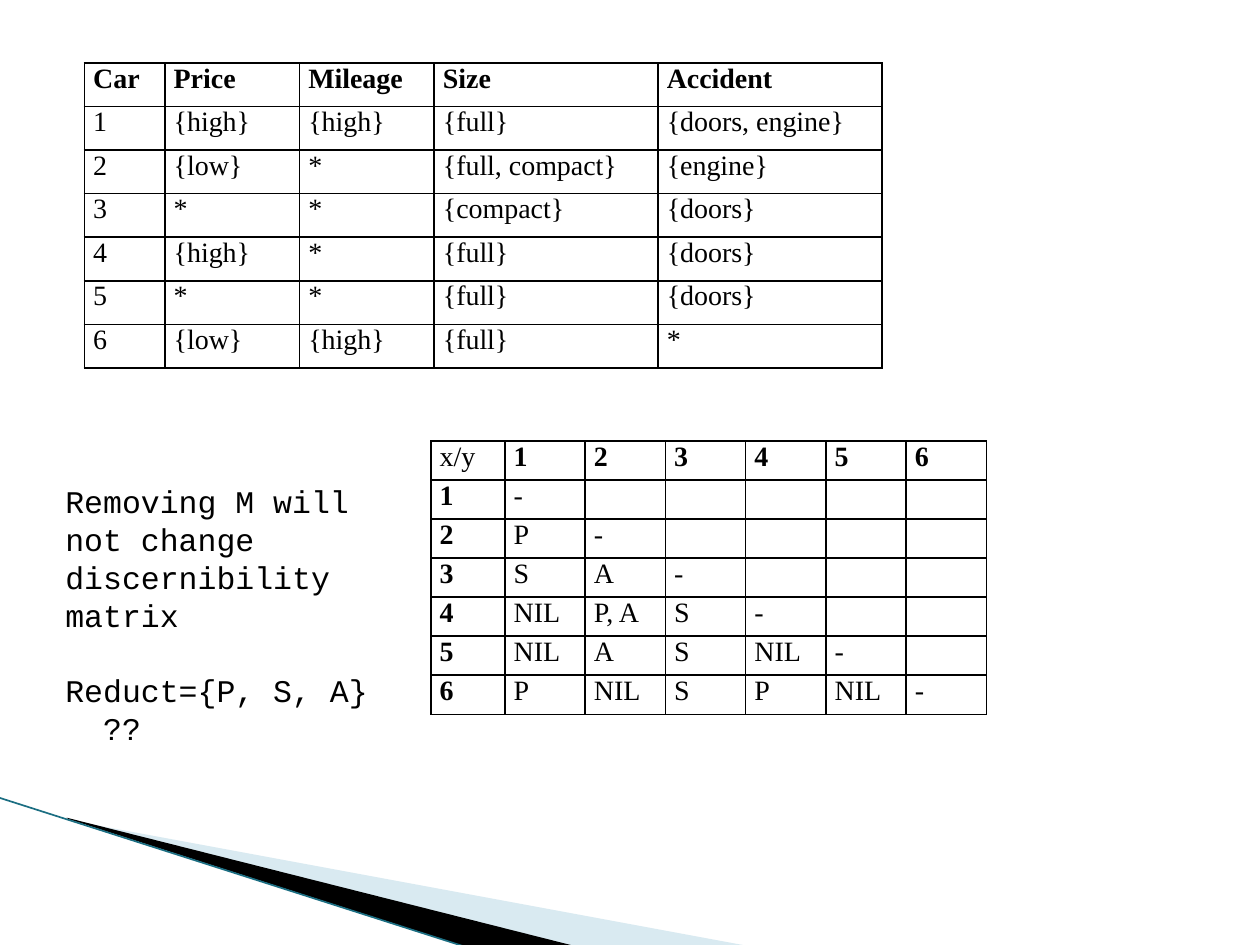
from pptx import Presentation
from pptx.util import Inches, Pt
from pptx.dml.color import RGBColor as RGB
from pptx.enum.shapes import MSO_CONNECTOR as Conn
from pptx.enum.text import MSO_AUTO_SIZE as Auto
from pptx.oxml.ns import qn
from lxml.etree import SubElement as Sub

# Content
CARS = [
    ["Car", "Price", "Mileage", "Size", "Accident"],
    ["1", "{high}", "{high}", "{full}", "{doors, engine}"],
    ["2", "{low}", "*", "{full, compact}", "{engine}"],
    ["3", "*", "*", "{compact}", "{doors}"],
    ["4", "{high}", "*", "{full}", "{doors}"],
    ["5", "*", "*", "{full}", "{doors}"],
    ["6", "{low}", "{high}", "{full}", "*"],
]
# Lower triangle of the discernibility matrix, one row per car
PAIRS = [
    ["-"],
    ["P", "-"],
    ["S", "A", "-"],
    ["NIL", "P, A", "S", "-"],
    ["NIL", "A", "S", "NIL", "-"],
    ["P", "NIL", "S", "P", "NIL", "-"],
]
NOTES = ["Removing M will", "not change", "discernibility matrix",
         "Reduct={P, S, A} ??"]
# Corner wedges: frame, points on the slide, colour, opacity in percent
WEDGES = [
    ((0.78, 5.47, 4.16, 1.58),
     [(0.55, 6.51), (5.95, 7.51), (4.56, 7.51), (0.55, 6.5)], "A0CBDC", 40),
    ((-0.06, 6.33, 4.16, 0.92),
     [(0.53, 6.49), (4.57, 7.51), (3.72, 7.52), (0.54, 6.5)], "000000", 100),
]
THEME = dict(ink="000000", edge="1B6E82", serif="Times New Roman",
             mono="Courier New", cell=16, note=18, rule=1)


def style(para, face, size, bold=False):
    font = para.font
    font.name, font.size, font.bold = face, Pt(size), bold
    font.color.rgb = RGB.from_string(THEME["ink"])


def border(cell):
    props = cell._tc.get_or_add_tcPr()
    for side in "LRTB":
        line = Sub(props, qn(f"a:ln{side}"), w=str(Pt(THEME["rule"])))
        Sub(Sub(line, qn("a:solidFill")), qn("a:srgbClr"), val=THEME["ink"])
    cell.fill.background()


def grid(slide, left, top, wide, high, parts, rows, is_bold):
    shape = slide.shapes.add_table(len(rows), len(parts), Inches(left),
                                   Inches(top), Inches(wide), Inches(high))
    table = shape.table
    table.horz_banding = False
    for col, part in zip(table.columns, parts):
        col.width = Inches(wide * part / sum(parts))
    for r, row in enumerate(rows):
        table.rows[r].height = Inches(high / len(rows))
        for c, text in enumerate(row):
            cell = table.cell(r, c)
            cell.margin_left = cell.margin_right = Inches(0.07)
            cell.margin_top = cell.margin_bottom = 0
            border(cell)
            cell.text = text
            style(cell.text_frame.paragraphs[0], THEME["serif"],
                  THEME["cell"], is_bold(r, c))


def wedge(slide, frame, points, color, alpha):
    dots = [(Inches(x), Inches(y)) for x, y in points]
    pen = slide.shapes.build_freeform(*dots[0])
    pen.add_line_segments(dots[1:], close=True)
    shape = pen.convert_to_shape()
    shape.shadow.inherit = False
    shape.line.fill.background()
    shape.fill.solid()
    shape.fill.fore_color.rgb = RGB.from_string(color)
    props = shape._element.spPr
    if alpha < 100:
        tint = props.find(".//" + qn("a:srgbClr"))
        Sub(tint, qn("a:alpha"), val=str(alpha * 1000))

    # The outline runs past its frame, so its points are set against the frame
    left, top, wide, high = map(Inches, frame)
    shape.left, shape.top, shape.width, shape.height = left, top, wide, high
    track = props.find(".//" + qn("a:path"))
    track.set("w", str(wide))
    track.set("h", str(high))
    for spot, (x, y) in zip(track.iter(qn("a:pt")), dots):
        spot.set("x", str(x - left))
        spot.set("y", str(y - top))


def main():
    deck = Presentation()
    deck.slide_width, deck.slide_height = Inches(10), Inches(7.5)
    slide = deck.slides.add_slide(deck.slide_layouts[6])

    # Corner decoration
    for item in WEDGES:
        wedge(slide, *item)
    edge = slide.shapes.add_connector(Conn.STRAIGHT, Inches(-0.01), Inches(6.33),
                                      Inches(3.71), Inches(7.52))
    edge.line.color.rgb = RGB.from_string(THEME["edge"])
    edge.line.width = Pt(0.95)
    Sub(edge._element.spPr, qn("a:effectLst"))

    # Car table and discernibility matrix
    grid(slide, 0.67, 0.5, 6.33, 2.42, [0.64, 1.07, 1.07, 1.78, 1.78], CARS,
         lambda r, c: r == 0)
    count = len(PAIRS)
    heads = [str(n + 1) for n in range(count)]
    rows = [["x/y"] + heads]
    for head, marks in zip(heads, PAIRS):
        rows.append([head] + marks + [""] * (count - len(marks)))
    grid(slide, 3.42, 3.5, 4.41, 2.17, [0.59] + [0.64] * count, rows,
         lambda r, c: (r == 0) != (c == 0))

    # Remark on the reduct
    box = slide.shapes.add_textbox(Inches(0.42), Inches(3.78),
                                   Inches(2.65), Inches(1.62))
    body = box.text_frame
    body.word_wrap = True
    body.auto_size = Auto.SHAPE_TO_FIT_TEXT
    body.text = "\n".join(NOTES)
    last = body.paragraphs[-1]
    last.space_before = Pt(21.5)
    hang = last._p.get_or_add_pPr()
    hang.set("marL", str(Inches(0.3)))
    hang.set("indent", str(Inches(-0.3)))
    for para in body.paragraphs:
        style(para, THEME["mono"], THEME["note"])

    deck.save("out.pptx")


if __name__ == "__main__":
    main()
